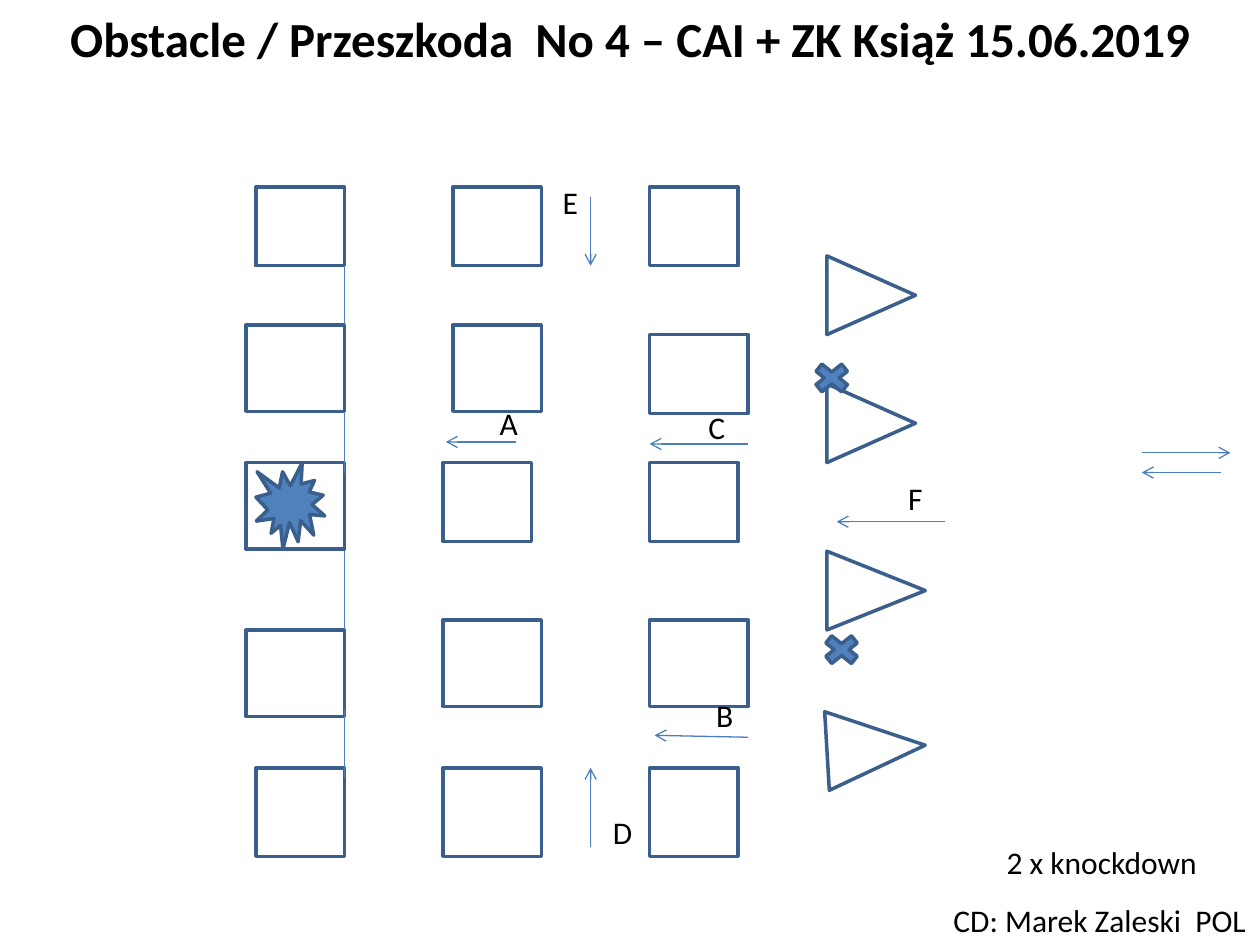
from dataclasses import dataclass

from lxml import etree
from pptx import Presentation
from pptx.dml.color import RGBColor
from pptx.enum.shapes import MSO_CONNECTOR, MSO_SHAPE
from pptx.enum.text import MSO_ANCHOR, MSO_AUTO_SIZE, PP_ALIGN
from pptx.oxml.ns import qn
from pptx.slide import Slide
from pptx.util import Inches, Pt

RECTANGLE, TRIANGLE = MSO_SHAPE.RECTANGLE, MSO_SHAPE.ISOSCELES_TRIANGLE
BURST, CROSS = MSO_SHAPE.EXPLOSION1, MSO_SHAPE.MATH_MULTIPLY
STRAIGHT = MSO_CONNECTOR.STRAIGHT
LEFT, CENTER = PP_ALIGN.LEFT, PP_ALIGN.CENTER
MIDDLE, TOP = MSO_ANCHOR.MIDDLE, MSO_ANCHOR.TOP
FIT_SHAPE, FIT_NONE = MSO_AUTO_SIZE.SHAPE_TO_FIT_TEXT, MSO_AUTO_SIZE.NONE

BLACK = RGBColor(0x00, 0x00, 0x00)
BLUE = RGBColor(0x4F, 0x81, 0xBD)
OUTLINE_BLUE = RGBColor(0x3A, 0x5F, 0x8C)
LINE_BLUE = RGBColor(0x4B, 0x7E, 0xBC)

WIDTH, HEIGHT = Inches(10), Inches(7.5)
COLUMNS, ROWS = 128, 96
TEXT_ROWS = 5.17

BLOCKS = [
    (25, 47, 10, 8.8), (25, 33, 10, 8.8), (26, 19, 9, 8), (25, 64, 10, 8.8), (26, 78, 9, 9),
    (66, 19, 9, 8), (66, 34, 10, 8), (66, 47, 9, 8), (66, 63, 10, 8.8), (66, 78, 9, 9),
    (45, 63, 10, 8.8), (45, 78, 10, 9), (45, 47, 9, 8), (46, 33, 9, 8.8), (46, 19, 9, 8),
]
CONES = [(88.5, 30, 9, 90), (88.5, 43, 9, 90), (89, 76, 10, 86.6), (89, 60, 10, 90)]
WALL_GAPS = [(27, 33), (42, 48), (56, 64), (72, 79)]
ENTRY_ARROWS = [(116, 46, 125, 46), (124, 48, 116, 48)]
GATES = [
    ("A", (49.5, 40.4, 4.5), (52.4, 44.9, 45.3, 44.9)),
    ("B", (71.5, 70.1, 4.4), (76, 74.9, 66.5, 74.7)),
    ("C", (70.7, 40.8, 4.4), (76, 45.1, 66, 45.1)),
    ("D", (61, 82, 4.6), (60, 86, 60, 78)),
    ("E", (55.9, 18, 4.1), (60, 20, 60, 27)),
    ("F", (91, 48, 4.1), (96, 53, 85, 53)),
]
KNOCKDOWNS = [(83, 64), (82, 36.4)]


@dataclass
class CourseSlide:
    """Draws obstacle elements on a slide measured in grid columns and rows."""

    slide: Slide
    font: str = "Calibri"
    text_size: int = 18

    def column(self, count):
        return round(WIDTH * count / COLUMNS)

    def row(self, count):
        return round(HEIGHT * count / ROWS)

    def box(self, left, top, width, height):
        return self.column(left), self.row(top), self.column(width), self.row(height)

    def text(self, words, left, top, width):
        shape = self.slide.shapes.add_textbox(*self.box(left, top, width, TEXT_ROWS))
        self.fill_text(shape, words, self.text_size, LEFT, TOP, False, FIT_SHAPE)

    def title(self, words):
        shape = self.slide.shapes.add_textbox(*self.box(0, 0, COLUMNS, 7.7))
        self.fill_text(shape, words, 28, CENTER, MIDDLE, True, FIT_NONE)

    def fill_text(self, shape, words, size, alignment, anchor, is_title, fit):
        frame = shape.text_frame
        frame.word_wrap = is_title
        frame.auto_size = fit
        frame.vertical_anchor = anchor
        paragraph = frame.paragraphs[0]
        paragraph.text = words
        paragraph.alignment = alignment
        paragraph.font.name = self.font
        paragraph.font.size = Pt(size)
        paragraph.font.bold = is_title
        paragraph.font.color.rgb = BLACK

    def shape(self, kind, left, top, width, height, fill=None, rotation=0):
        shape = self.slide.shapes.add_shape(kind, *self.box(left, top, width, height))
        shape.shadow.inherit = False
        shape.rotation = rotation
        if fill is None:
            shape.fill.background()
        else:
            shape.fill.solid()
            shape.fill.fore_color.rgb = fill
        shape.line.color.rgb = OUTLINE_BLUE
        shape.line.width = Pt(2)

    def cone(self, center_column, center_row, length, rotation):
        base = 8
        self.shape(TRIANGLE, center_column - base / 2, center_row - length / 2,
                   base, length, rotation=rotation)

    def line(self, start_column, start_row, end_column, end_row, arrow=False):
        connector = self.slide.shapes.add_connector(
            STRAIGHT, self.column(start_column), self.row(start_row),
            self.column(end_column), self.row(end_row))
        connector.line.color.rgb = LINE_BLUE
        connector.line.width = Pt(0.75)
        properties = connector._element.spPr
        if arrow:
            etree.SubElement(properties.find(qn("a:ln")), qn("a:tailEnd"), type="arrow")
        etree.SubElement(properties, qn("a:effectLst"))


def main():
    presentation = Presentation()
    presentation.slide_width, presentation.slide_height = WIDTH, HEIGHT
    course = CourseSlide(presentation.slides.add_slide(presentation.slide_layouts[6]))

    course.title("Obstacle / Przeszkoda  No 4 – CAI + ZK Książ 15.06.2019")
    course.text("CD: Marek Zaleski  POL", 95.6, 90.9, 32.4)
    for block in BLOCKS:
        course.shape(RECTANGLE, *block)
    for cone in CONES:
        course.cone(*cone)
    course.shape(BURST, 26, 47, 7, 8.8, BLUE)
    for arrow in ENTRY_ARROWS:
        course.line(*arrow, arrow=True)
    for start, end in WALL_GAPS:
        course.line(35, start, 35, end)
    for letter, label, arrow in GATES:
        course.line(*arrow, arrow=True)
        course.text(letter, *label)
    for left, top in KNOCKDOWNS:
        course.shape(CROSS, left, top, 5, 4, BLUE)
    course.text("2 x knockdown", 101, 85, 22.1)

    presentation.save("out.pptx")


if __name__ == "__main__":
    main()
